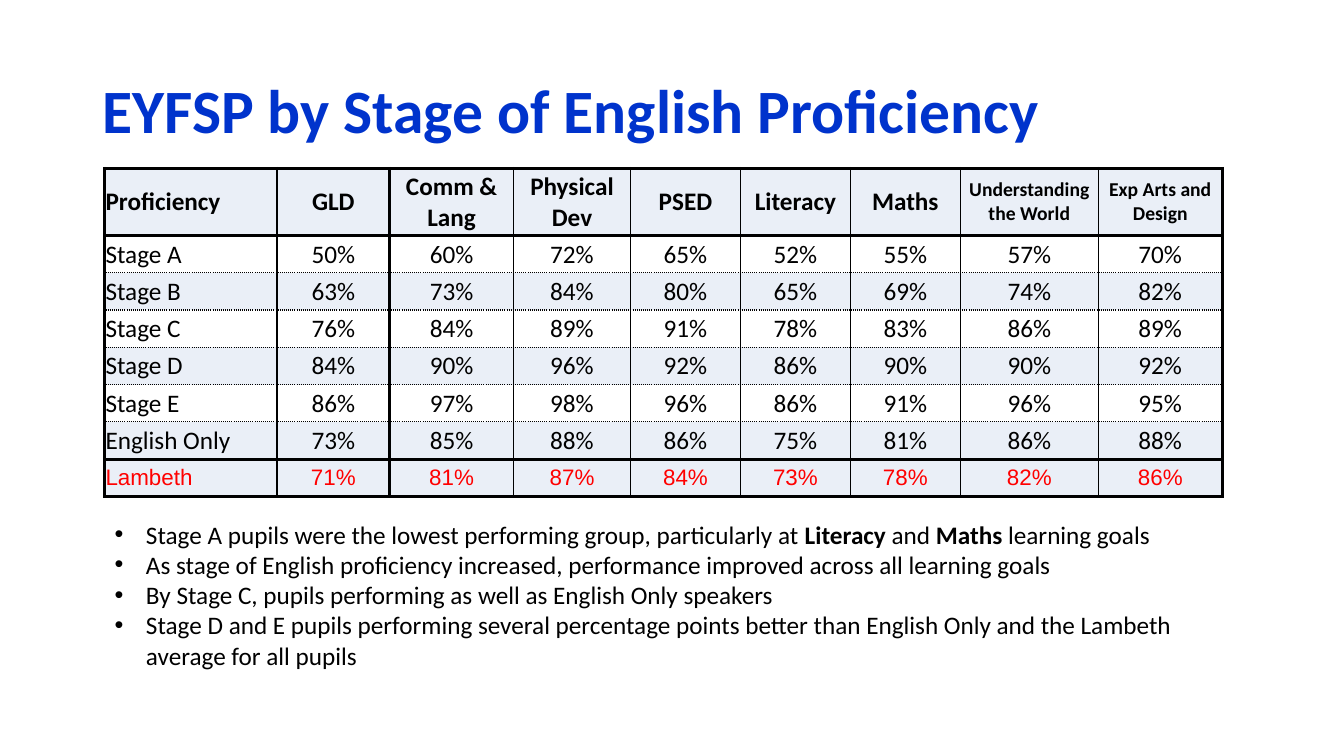
from lxml import etree
from pptx import Presentation, util as u
from pptx.dml.color import RGBColor
from pptx.enum import text
from pptx.oxml import ns

COLOURS = {"title": "0033CC", "ink": "000000", "lambeth": "FF0000",
           "band": "EAEFF7", "plain": "FFFFFF"}
HEADINGS = ["Proficiency", "GLD", "Comm & Lang", "Physical Dev", "PSED", "Literacy",
            "Maths", "Understanding the World", "Exp Arts and Design"]
RESULTS = [
    ("Stage A", 50, 60, 72, 65, 52, 55, 57, 70),
    ("Stage B", 63, 73, 84, 80, 65, 69, 74, 82),
    ("Stage C", 76, 84, 89, 91, 78, 83, 86, 89),
    ("Stage D", 84, 90, 96, 92, 86, 90, 90, 92),
    ("Stage E", 86, 97, 98, 96, 86, 91, 96, 95),
    ("English Only", 73, 85, 88, 86, 75, 81, 86, 88),
    ("Lambeth", 71, 81, 87, 84, 73, 78, 82, 86),
]
COLUMN_WIDTHS = [4.34, 2.84, 3.12, 2.95, 2.77, 2.77, 2.77, 3.48, 3.12]
HEADER_HEIGHT, ROW_HEIGHT = 1.69, 0.94
THICK_ROW_EDGES = {0, 1, 7, 8}
THICK_COLUMN_EDGES = {0, 2, 9}
FINDINGS = [
    [("Stage A pupils were the lowest performing group, particularly at ", False),
     ("Literacy", True), (" and ", False), ("Maths ", True), ("learning goals", False)],
    [("As stage of English proficiency increased, performance improved across all "
      "learning goals", False)],
    [("By Stage C, pupils performing as well as English Only speakers", False)],
    [("Stage D and E pupils performing several percentage points better than English "
      "Only and the Lambeth average for all pupils", False)],
]


def add_run(p, words, size, colour="ink", bold=False, font="Calibri"):
    r = p.add_run()
    r.text = words
    r.font.name = font
    r.font.size = u.Pt(size)
    r.font.bold = bold
    r.font.color.rgb = RGBColor.from_string(COLOURS[colour])


def add_text_frame(s, box):
    tf = s.shapes.add_textbox(*[u.Cm(v) for v in box]).text_frame
    tf.word_wrap = True
    return tf


def add_title(s, box):
    tf = add_text_frame(s, box)
    tf.vertical_anchor = text.MSO_ANCHOR.MIDDLE
    p = tf.paragraphs[0]
    p.line_spacing = 0.9
    add_run(p, "EYFSP by Stage of English Proficiency", 44, "title", True)


def add_border(cell, side, thick, dotted=False):
    ln = etree.SubElement(cell._tc.get_or_add_tcPr(), ns.qn("a:ln" + side),
                          w=str(u.Pt(2.25 if thick else 1)))
    fill = etree.SubElement(ln, ns.qn("a:solidFill"))
    etree.SubElement(fill, ns.qn("a:srgbClr"), val=COLOURS["ink"])
    etree.SubElement(ln, ns.qn("a:prstDash"), val="sysDot" if dotted else "solid")


def style_cell(cell, row, col):
    for side, edge in (("L", col), ("R", col + 1)):
        add_border(cell, side, edge in THICK_COLUMN_EDGES)
    for side, edge in (("T", row), ("B", row + 1)):
        thick = edge in THICK_ROW_EDGES
        add_border(cell, side, thick, not thick)
    cell.fill.solid()
    fill = "plain" if row in (1, 3, 5) else "band"
    cell.fill.fore_color.rgb = RGBColor.from_string(COLOURS[fill])
    cell.vertical_anchor = text.MSO_ANCHOR.MIDDLE
    cell.margin_left = cell.margin_right = cell.margin_top = u.Cm(0.02)
    cell.margin_bottom = 0


def fill_cell(cell, value, row, col):
    p = cell.text_frame.paragraphs[0]
    if col:
        p.alignment = text.PP_ALIGN.CENTER
    words = f"{value}%" if row and col else value
    if row == 0:
        add_run(p, words, 14 if col >= 7 else 18, bold=True)
    elif row == len(RESULTS):
        add_run(p, words, 16, "lambeth", font="Arial")
    else:
        add_run(p, words, 18)


def add_results(s, box):
    rows = [HEADINGS, *RESULTS]
    sp = s.shapes.add_table(len(rows), len(HEADINGS), *[u.Cm(v) for v in box])
    table = sp.table
    for column, width in zip(table.columns, COLUMN_WIDTHS):
        column.width = u.Cm(width)
    for row, values in enumerate(rows):
        table.rows[row].height = u.Cm(ROW_HEIGHT if row else HEADER_HEIGHT)
        for col, value in enumerate(values):
            cell = table.cell(row, col)
            style_cell(cell, row, col)
            fill_cell(cell, value, row, col)


def add_findings(s, box):
    tf = add_text_frame(s, box)
    indent = u.Cm(0.79)
    for i, finding in enumerate(FINDINGS):
        p = tf.add_paragraph() if i else tf.paragraphs[0]
        pPr = p._p.get_or_add_pPr()
        pPr.set("marL", str(indent))
        pPr.set("indent", str(-indent))
        etree.SubElement(pPr, ns.qn("a:buFont"), typeface="Arial")
        etree.SubElement(pPr, ns.qn("a:buChar"), char="•")
        for words, bold in finding:
            add_run(p, words, 18, bold=bold)


def main():
    prs = Presentation()
    prs.slide_width, prs.slide_height = u.Cm(33.87), u.Cm(19.05)
    s = prs.slides.add_slide(prs.slide_layouts[6])
    add_title(s, (2.34, 1.02, 29.21, 3.68))
    add_results(s, (2.64, 4.24, 28.16, 8.27))
    add_findings(s, (2.64, 12.95, 28.19, 4.11))
    prs.save("out.pptx")


if __name__ == "__main__":
    main()
